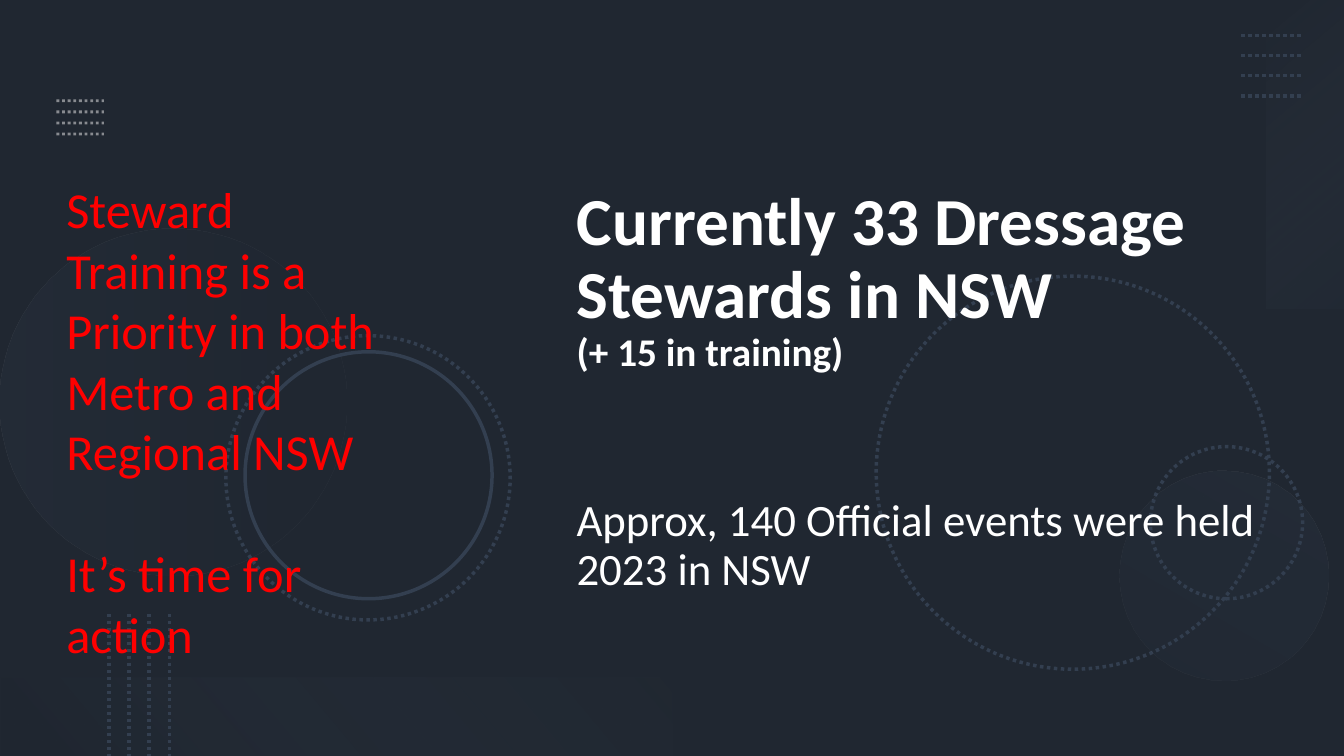
"""Builds the dressage steward training slide."""
from dataclasses import dataclass

from lxml.etree import SubElement
from pptx import Presentation
from pptx.dml.color import RGBColor as RGB
from pptx.enum.dml import MSO_LINE as Dash
from pptx.enum.shapes import MSO_CONNECTOR as Connector, MSO_SHAPE as Shape
from pptx.enum.text import MSO_ANCHOR as Anchor, MSO_AUTO_SIZE as AutoSize, PP_ALIGN as Align
from pptx.oxml.ns import qn
from pptx.util import Inches, Pt


@dataclass(frozen=True)
class Theme:
    font: str = "Calibri"
    base: str = "44546A"
    shade: str = "000000"
    deep: str = "222A35"
    slate: str = "333F50"
    mist: str = "ADB9CA"
    haze: str = "8497B0"
    pale: str = "F1F0F0"
    white: str = "FFFFFF"
    alert: str = "FF0000"
    headline: int = 48
    aside: int = 28
    body: int = 32
    message: int = 36
    stroke: float = 2.5


def apply(target, values):
    for name, value in values.items():
        setattr(target, name, value)


def set_alpha(color_element, percent):
    SubElement(color_element, qn("a:alpha")).set("val", str(percent * 1000))


class SlideBuilder:
    def __init__(self, slide, theme):
        self.slide = slide
        self.theme = theme

    def shape(self, kind, frame, rotation=0):
        item = self.slide.shapes.add_shape(kind, *map(Inches, frame))
        item.shadow.inherit = False
        item.rotation = rotation
        return item

    def panel(self, frame, color, opacity=100):
        item = self.shape(Shape.RECTANGLE, frame)
        item.fill.solid()
        item.fill.fore_color.rgb = RGB.from_string(color)
        item.line.fill.background()
        if opacity < 100:
            set_alpha(item.element.spPr.find(".//" + qn("a:srgbClr")), opacity)

    def glow(self, kind, frame, rotation, stops, angle):
        item = self.shape(kind, frame, rotation)
        item.line.fill.background()
        item.fill.gradient()
        item.fill.gradient_angle = 360 - angle
        for stop, (position, color, _) in zip(item.fill.gradient_stops, stops):
            stop.position = position
            stop.color.rgb = RGB.from_string(color)
        colors = item.element.spPr.findall(".//" + qn("a:srgbClr"))
        for color, (_, _, opacity) in zip(colors, stops):
            set_alpha(color, opacity)

    def ring(self, left, top, size, rotation, dash=Dash.ROUND_DOT):
        item = self.shape(Shape.OVAL, (left, top, size, size), rotation)
        item.fill.background()
        self.stroke(item.line, self.theme.slate, self.theme.stroke, dash)

    def stroke(self, line, color, width, dash):
        line.color.rgb = RGB.from_string(color)
        apply(line, {"width": Pt(width), "dash_style": dash})

    def dotted_rows(self, start, end, step, color, width, opacity=100):
        for index in range(4):
            shift_x, shift_y = step[0] * index, step[1] * index
            ends = (start[0] + shift_x, start[1] + shift_y, end[0] + shift_x, end[1] + shift_y)
            row = self.slide.shapes.add_connector(Connector.STRAIGHT, *map(Inches, ends))
            self.stroke(row.line, color, width, Dash.ROUND_DOT)
            properties = row.element.spPr
            if opacity < 100:
                set_alpha(properties.find(".//" + qn("a:srgbClr")), opacity)
            SubElement(properties, qn("a:effectLst"))

    def run(self, paragraph, text, size, color, bold=False):
        run = paragraph.add_run()
        run.text = text
        run.font.color.rgb = RGB.from_string(color)
        apply(run.font, {"name": self.theme.font, "size": Pt(size), "bold": bold})

    def title(self, frame, headline, aside):
        title = self.slide.shapes.title
        title.element.getparent().append(title.element)
        apply(title, dict(zip(("left", "top", "width", "height"), map(Inches, frame))))
        apply(title.text_frame, {"word_wrap": True, "auto_size": AutoSize.NONE,
                                 "vertical_anchor": Anchor.BOTTOM})
        paragraph = title.text_frame.paragraphs[0]
        apply(paragraph, {"alignment": Align.LEFT, "line_spacing": 0.9})
        self.run(paragraph, headline, self.theme.headline, self.theme.white, True)
        paragraph.add_line_break()
        self.run(paragraph, aside, self.theme.aside, self.theme.white, True)

    def text(self, frame, lines, size, color, frame_format, gap=0, spacing=1.0):
        body = self.slide.shapes.add_textbox(*map(Inches, frame)).text_frame
        apply(body, {"word_wrap": True, **frame_format})
        for index, line in enumerate(lines):
            paragraph = body.add_paragraph() if index else body.paragraphs[0]
            apply(paragraph, {"alignment": Align.LEFT, "line_spacing": spacing,
                              "space_before": Pt(gap if index else 0)})
            self.run(paragraph, line, size, color)


def main():
    theme = Theme()
    deck = Presentation()
    apply(deck, {"slide_width": Inches(13.33), "slide_height": Inches(7.5)})
    page = SlideBuilder(deck.slides.add_slide(deck.slide_layouts[5]), theme)

    full_page = (0, 0, 13.33, 7.5)
    page.panel(full_page, theme.base)
    page.panel(full_page, theme.shade, 53)

    page.ring(8.69, 2.74, 3.9, 75)
    page.ring(11.41, 4.43, 1.51, 270)
    page.glow(Shape.OVAL, (0, 2.27, 3.44, 3.44), 270,
              [(0, theme.slate, 20), (1, theme.deep, 10)], 90)
    page.glow(Shape.OVAL, (11.1, 4.67, 2.08, 2.08), 210,
              [(0, theme.slate, 10), (1, theme.slate, 20)], 90)
    page.ring(2.24, 3.33, 2.82, 75)
    page.ring(2.43, 3.49, 2.45, 75, Dash.SOLID)

    page.dotted_rows((0.56, 1), (1.03, 1), (0, 0.11), theme.pale, 2, 50)
    page.glow(Shape.RECTANGLE, (11.42, 1.14, 3.06, 0.78), 270,
              [(0, theme.mist, 0), (1, theme.slate, 10)], 140)
    page.dotted_rows((12.31, 0.35), (12.91, 0.35), (0, 0.2), theme.slate, theme.stroke)

    page.title((5.62, 0.69, 6.94, 3.08),
               "Currently 33 Dressage Stewards in NSW", "(+ 15 in training)")
    page.text((5.62, 3.88, 6.94, 2.73), ["Approx, 140 Official events were held 2023 in NSW"],
              theme.body, theme.white, {"margin_top": Inches(1.06)}, spacing=0.9)

    page.glow(Shape.RECTANGLE, (0, 6.72, 6.67, 0.78), 180,
              [(0.1, theme.deep, 10), (1, theme.haze, 0)], 140)
    page.dotted_rows((1.08, 6.09), (1.08, 7.5), (0.2, 0), theme.slate, theme.stroke)
    page.text((0.56, 1.72, 3.57, 4.95),
              ["Steward Training is a Priority in both Metro and Regional NSW",
               "It’s time for action"],
              theme.message, theme.alert,
              {"auto_size": AutoSize.SHAPE_TO_FIT_TEXT, "margin_right": Inches(0.3)}, gap=44)

    deck.save("out.pptx")


if __name__ == "__main__":
    main()
